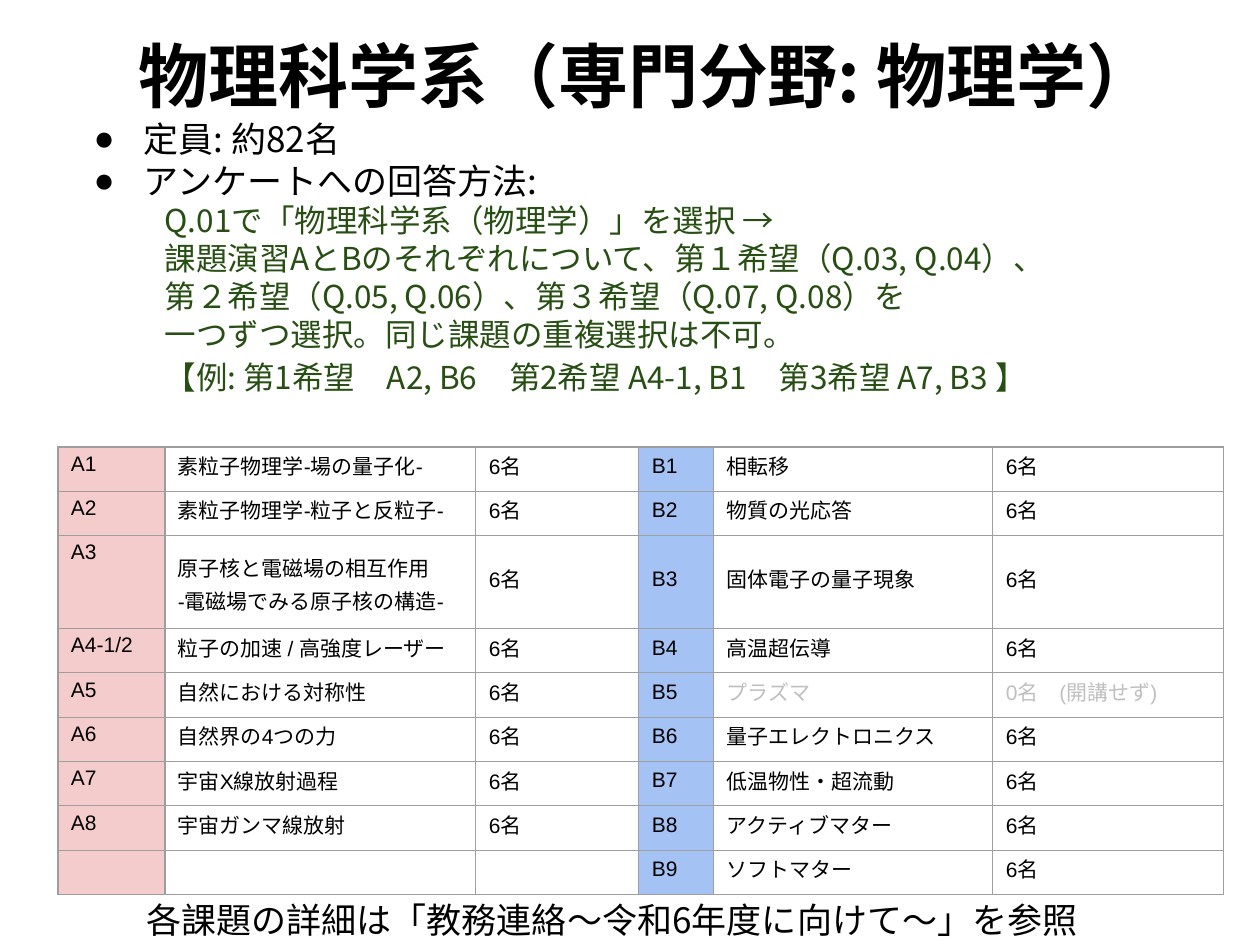
"""Build the slide that lists the physics course choices and their quotas."""
from dataclasses import dataclass
from itertools import zip_longest

from lxml import etree
from pptx import Presentation
from pptx import util as u
from pptx.dml.color import RGBColor
from pptx.enum import text as t
from pptx.oxml import ns

DPI = 126


@dataclass(frozen=True)
class Theme:
    ink: str = "000000"
    green: str = "274E13"
    muted: str = "BFBFBF"
    pink: str = "F4CCCC"
    blue: str = "A4C2F4"
    border: str = "9E9E9E"
    japanese: str = "Noto Sans CJK JP"
    latin: str = "Arial"
    title_size: int = 40
    body_size: int = 20
    answer_size: int = 18
    table_size: int = 12


@dataclass(frozen=True)
class Box:
    left: int
    top: int
    width: int
    height: int


@dataclass(frozen=True)
class Line:
    text: str
    size: int
    color: str
    indent: int
    hanging: int = 0
    before: int = 0


@dataclass(frozen=True)
class Course:
    code: str
    title: str
    quota: str = "6名"
    offered: bool = True


THEME = Theme()
TITLE_BOX = Box(58, 34, 1179, 81)
BODY_BOX = Box(68, 111, 1159, 320)
TABLE_BOX = Box(58, 447, 1166, 445)
FOOTER_BOX = Box(134, 892, 1028, 50)
COLUMN_WIDTHS = (107, 311, 163, 75, 279, 231)
ROW_HEIGHT, TALL_ROW_HEIGHT = 44, 92
CELL_MARGIN = 13

ANSWER = (
    "Q.01で「物理科学系（物理学）」を選択 →\v"
    "課題演習AとBのそれぞれについて、第１希望（Q.03, Q.04）、\v"
    "第２希望（Q.05, Q.06）、第３希望（Q.07, Q.08）を"
)
EXAMPLE = "【例: 第1希望　A2, B6　第2希望 A4-1, B1　第3希望 A7, B3 】"
BODY = (
    Line("定員: 約82名", THEME.body_size, THEME.ink, 63, 50),
    Line("アンケートへの回答方法:", THEME.body_size, THEME.ink, 63, 50),
    Line(ANSWER, THEME.answer_size, THEME.green, 84),
    Line("一つずつ選択。同じ課題の重複選択は不可。", THEME.answer_size, THEME.green, 84),
    Line(EXAMPLE, THEME.answer_size, THEME.green, 84, before=5),
)
A_COURSES = (
    Course("A1", "素粒子物理学-場の量子化-"),
    Course("A2", "素粒子物理学-粒子と反粒子-"),
    Course("A3", "原子核と電磁場の相互作用\n-電磁場でみる原子核の構造-"),
    Course("A4-1/2", "粒子の加速 / 高強度レーザー"),
    Course("A5", "自然における対称性"),
    Course("A6", "自然界の4つの力"),
    Course("A7", "宇宙X線放射過程"),
    Course("A8", "宇宙ガンマ線放射"),
)
B_COURSES = (
    Course("B1", "相転移"),
    Course("B2", "物質の光応答"),
    Course("B3", "固体電子の量子現象"),
    Course("B4", "高温超伝導"),
    Course("B5", "プラズマ", "0名　(開講せず)", False),
    Course("B6", "量子エレクトロニクス"),
    Course("B7", "低温物性・超流動"),
    Course("B8", "アクティブマター"),
    Course("B9", "ソフトマター"),
)


def px(length: int) -> u.Emu:
    """Turn pixels into EMU."""
    return u.Emu(round(length * 914400 / DPI))


def place(shape, box: Box) -> None:
    """Move and size a shape."""
    shape.left, shape.top = px(box.left), px(box.top)
    shape.width, shape.height = px(box.width), px(box.height)


def style(para, size: int, color: str, latin: str = THEME.japanese,
          spacing: float = 1.0, bold: bool = False) -> None:
    """Set the type and spacing of a paragraph."""
    font = para.font
    font.size, font.bold, font.name = u.Pt(size), bold, latin
    font.color.rgb = RGBColor.from_string(color)
    east_asian = etree.SubElement(para._p.pPr.find(ns.qn("a:defRPr")), ns.qn("a:ea"))
    east_asian.set("typeface", THEME.japanese)
    para.line_spacing = spacing
    para.space_before = u.Pt(0)


def set_bullet(para, line: Line) -> None:
    """Indent a paragraph and give it a bullet when it hangs."""
    properties = para._p.get_or_add_pPr()
    properties.set("marL", str(px(line.indent)))
    properties.set("indent", str(-px(line.hanging)))
    bullet = etree.Element(ns.qn("a:buChar" if line.hanging else "a:buNone"))
    if line.hanging:
        bullet.set("char", "●")
    properties.find(ns.qn("a:defRPr")).addprevious(bullet)


def draw_title(shape) -> None:
    """Fill the title placeholder."""
    place(shape, TITLE_BOX)
    frame = shape.text_frame
    frame.text = "物理科学系（専門分野: 物理学）"
    frame.auto_size = t.MSO_AUTO_SIZE.NONE
    frame.vertical_anchor = t.MSO_ANCHOR.MIDDLE
    para = frame.paragraphs[0]
    para.alignment = t.PP_ALIGN.CENTER
    style(para, THEME.title_size, THEME.ink, bold=True)


def draw_body(shape) -> None:
    """Fill the body placeholder with the instructions."""
    place(shape, BODY_BOX)
    frame = shape.text_frame
    frame.auto_size = t.MSO_AUTO_SIZE.NONE
    for index, line in enumerate(BODY):
        para = frame.add_paragraph() if index else frame.paragraphs[0]
        para.text = line.text
        style(para, line.size, line.color)
        para.space_before = px(line.before)
        set_bullet(para, line)


def draw_borders(cell) -> None:
    """Give a cell thin lines on all sides."""
    properties = cell._tc.get_or_add_tcPr()
    for side in ("lnL", "lnR", "lnT", "lnB"):
        edge = etree.SubElement(properties, ns.qn(f"a:{side}"), w=str(u.Pt(0.75)))
        fill = etree.SubElement(edge, ns.qn("a:solidFill"))
        etree.SubElement(fill, ns.qn("a:srgbClr"), val=THEME.border)


def draw_cell(cell, text: str, color: str, fill: str | None, anchor) -> None:
    """Fill one table cell."""
    margin = px(CELL_MARGIN if text else 0)
    cell.margin_left = cell.margin_right = margin
    cell.margin_top = cell.margin_bottom = margin
    cell.vertical_anchor = anchor
    draw_borders(cell)
    if fill:
        cell.fill.solid()
        cell.fill.fore_color.rgb = RGBColor.from_string(fill)
    else:
        cell.fill.background()
    cell.text_frame.text = text
    for para in cell.text_frame.paragraphs:
        style(para, THEME.table_size, color, THEME.latin, 1.1 if "\n" in text else 0.6)


def draw_course(cells, course: Course, fill: str, code_anchor) -> None:
    """Fill the code, title and quota cells of a course."""
    color = THEME.ink if course.offered else THEME.muted
    middle = t.MSO_ANCHOR.MIDDLE
    draw_cell(cells[0], course.code, THEME.ink, fill, code_anchor)
    draw_cell(cells[1], course.title, color, None, middle)
    draw_cell(cells[2], course.quota, color, None, middle)


def draw_table(page) -> None:
    """Draw the A and B courses side by side."""
    pairs = list(zip_longest(A_COURSES, B_COURSES, fillvalue=Course("", "", "")))
    frame = page.shapes.add_table(len(pairs), len(COLUMN_WIDTHS), 0, 0, px(1), px(1))
    place(frame, TABLE_BOX)
    table = frame.table
    table.first_row = table.horz_banding = False
    for column, width in zip(table.columns, COLUMN_WIDTHS):
        column.width = px(width)
    for row, (a_course, b_course) in zip(table.rows, pairs):
        row.height = px(TALL_ROW_HEIGHT if "\n" in a_course.title else ROW_HEIGHT)
        cells = list(row.cells)
        draw_course(cells[:3], a_course, THEME.pink, t.MSO_ANCHOR.TOP)
        draw_course(cells[3:], b_course, THEME.blue, t.MSO_ANCHOR.MIDDLE)


def draw_footer(page) -> None:
    """Draw the closing reference."""
    shape = page.shapes.add_textbox(0, 0, px(1), px(1))
    place(shape, FOOTER_BOX)
    frame = shape.text_frame
    frame.word_wrap = True
    frame.text = "各課題の詳細は「教務連絡～令和6年度に向けて～」を参照"
    style(frame.paragraphs[0], THEME.body_size, THEME.ink)


def main() -> None:
    """Build and save the deck."""
    deck = Presentation()
    deck.slide_width, deck.slide_height = px(1260), px(945)
    page = deck.slides.add_slide(deck.slide_layouts[1])
    draw_title(page.shapes.title)
    draw_body(page.placeholders[1])
    draw_table(page)
    draw_footer(page)
    deck.save("out.pptx")


if __name__ == "__main__":
    main()
